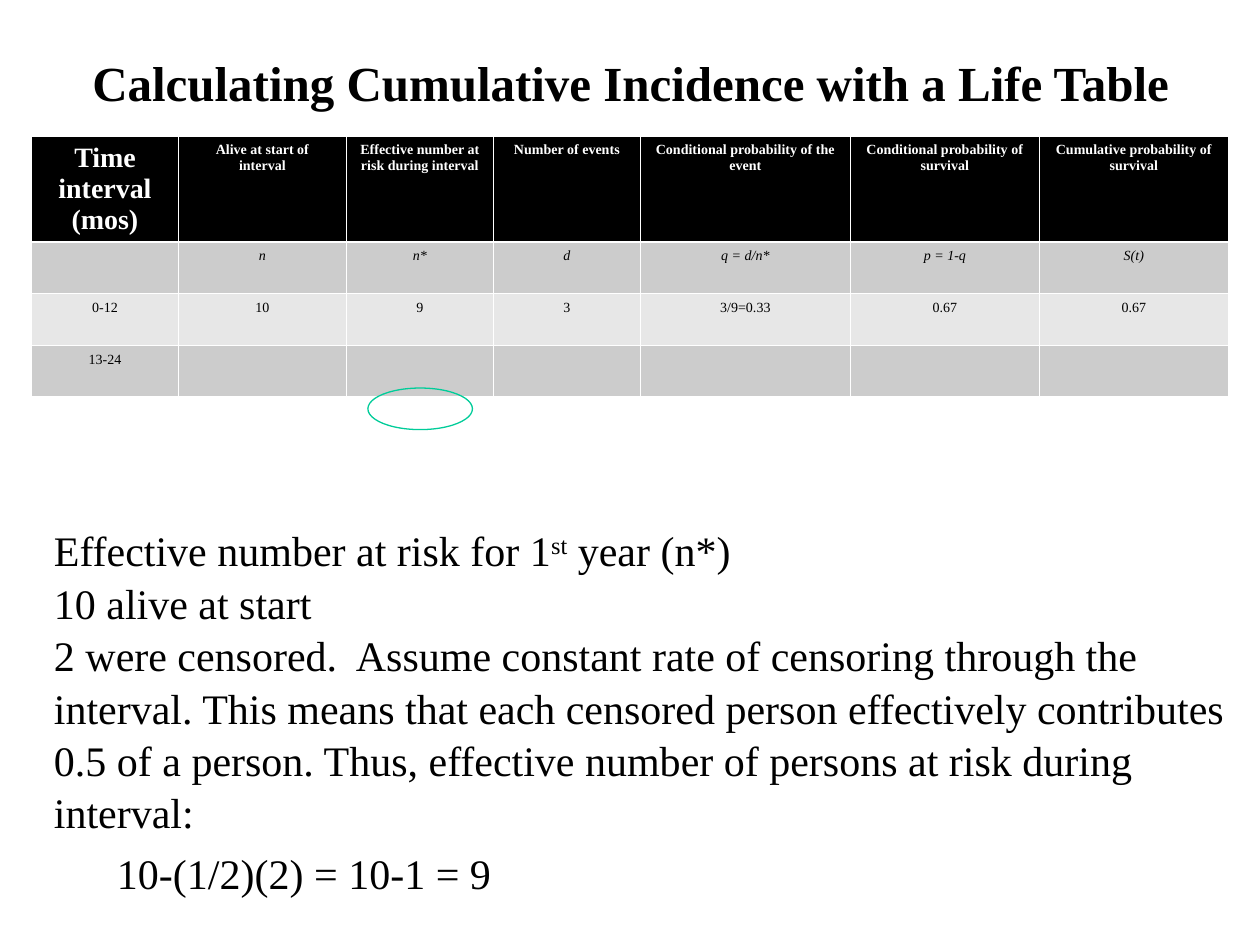
from pptx import Presentation
from pptx.dml.color import RGBColor
from pptx.enum.shapes import MSO_SHAPE
from pptx.enum.text import MSO_ANCHOR, PP_ALIGN
from pptx.util import Inches, Pt

CENTER, TOP = PP_ALIGN.CENTER, MSO_ANCHOR.TOP
OVAL = MSO_SHAPE.OVAL
FACE = "Times New Roman"
WIDE, HIGH = 10, 7.5

TITLE = "Calculating Cumulative Incidence with a Life Table"
ROWS = [
    ["Time interval (mos)", "Alive at start of interval",
     "Effective number at risk during interval", "Number of events",
     "Conditional probability of the event",
     "Conditional probability of survival",
     "Cumulative probability of survival"],
    ["", "n", "n*", "d", "q = d/n*", "p = 1-q", "S(t)"],
    ["0-12", "10", "9", "3", "3/9=0.33", "0.67", "0.67"],
    ["13-24", "", "", "", "", "", ""],
]
FILLS = ["000000", "CCCCCC", "E7E7E7", "CCCCCC"]
SIXTHS = [7, 8, 7, 7, 10, 9, 9]  # column widths in sixths of an inch
TALL = [0.83, 0.41, 0.41, 0.41]
NOTES = [
    ["Effective number at risk for 1", "st", " year (n*)"],
    ["10 alive at start"],
    ["2 were censored.  Assume constant rate of censoring through the "
     "interval. This means that each censored person effectively contributes "
     "0.5 of a person. Thus, effective number of persons at risk during "
     "interval:"],
    ["10-(1/2)(2) = 10-1 = 9"],
]


def tint(code):
    return RGBColor.from_string(code)


def write(para, text, size, color="000000", **form):
    run = para.add_run()
    run.text = text
    look = {"name": FACE, "size": Pt(size), **form}
    for key, value in look.items():
        setattr(run.font, key, value)
    run.font.color.rgb = tint(color)
    return run


def place(shape, *box):
    for key, value in zip(("left", "top", "width", "height"), box):
        setattr(shape, key, Inches(value))


def frame(shape, inset):
    text = shape.text_frame
    form = {"word_wrap": True, "vertical_anchor": TOP,
            "margin_top": Inches(inset)}
    for key, value in form.items():
        setattr(text, key, value)
    return text


def add_title(slide):
    title = slide.shapes.title
    place(title, 0.17, 0.33, WIDE - 0.33, 0.57)
    para = frame(title, 0.09).paragraphs[0]
    para.alignment = CENTER
    write(para, TITLE, 28, bold=True)


def add_life(slide):
    grid = slide.shapes.add_table(
        len(ROWS), len(SIXTHS), Inches(0.25), Inches(1.08),
        Inches(sum(SIXTHS) / 6), Inches(sum(TALL))).table
    for col, share in zip(grid.columns, SIXTHS):
        col.width = Inches(share / 6)
    for r, (row, fill) in enumerate(zip(ROWS, FILLS)):
        grid.rows[r].height = Inches(TALL[r])
        for c, text in enumerate(row):
            cell = grid.cell(r, c)
            cell.fill.solid()
            cell.fill.fore_color.rgb = tint(fill)
            if text:
                para = cell.text_frame.paragraphs[0]
                para.alignment = CENTER
                write(para, text, 16 if r == c == 0 else 8,
                      "FFFFFF" if r == 0 else "000000",
                      bold=r == 0, italic=r == 1)


def add_notes(slide):
    box = slide.shapes.add_textbox(0, 0, 0, 0)
    place(box, 0.33, 4.08, WIDE - 0.5, 3.68)
    text = frame(box, 0.07)
    for i, parts in enumerate(NOTES):
        para = text.add_paragraph() if i else text.paragraphs[0]
        para.line_spacing = 1.04
        for part in parts:
            run = write(para, part, 24)
            if part == "st":
                run.font._element.set("baseline", "30000")
    para.level = 1
    para.space_before = Pt(4.8)
    para._p.get_or_add_pPr().set("marL", str(Inches(0.5)))


def add_ring(slide):
    ring = slide.shapes.add_shape(OVAL, 0, 0, 0, 0)
    place(ring, 2.92, 3.08, 0.83, 0.33)
    ring.shadow.inherit = False
    ring.fill.background()
    ring.line.color.rgb = tint("00CC99")
    ring.line.width = Pt(0.75)


def main():
    deck = Presentation()
    deck.slide_width, deck.slide_height = Inches(WIDE), Inches(HIGH)
    slide = deck.slides.add_slide(deck.slide_layouts[5])
    for add in (add_life, add_title, add_notes, add_ring):
        add(slide)
    deck.save("out.pptx")


if __name__ == "__main__":
    main()
